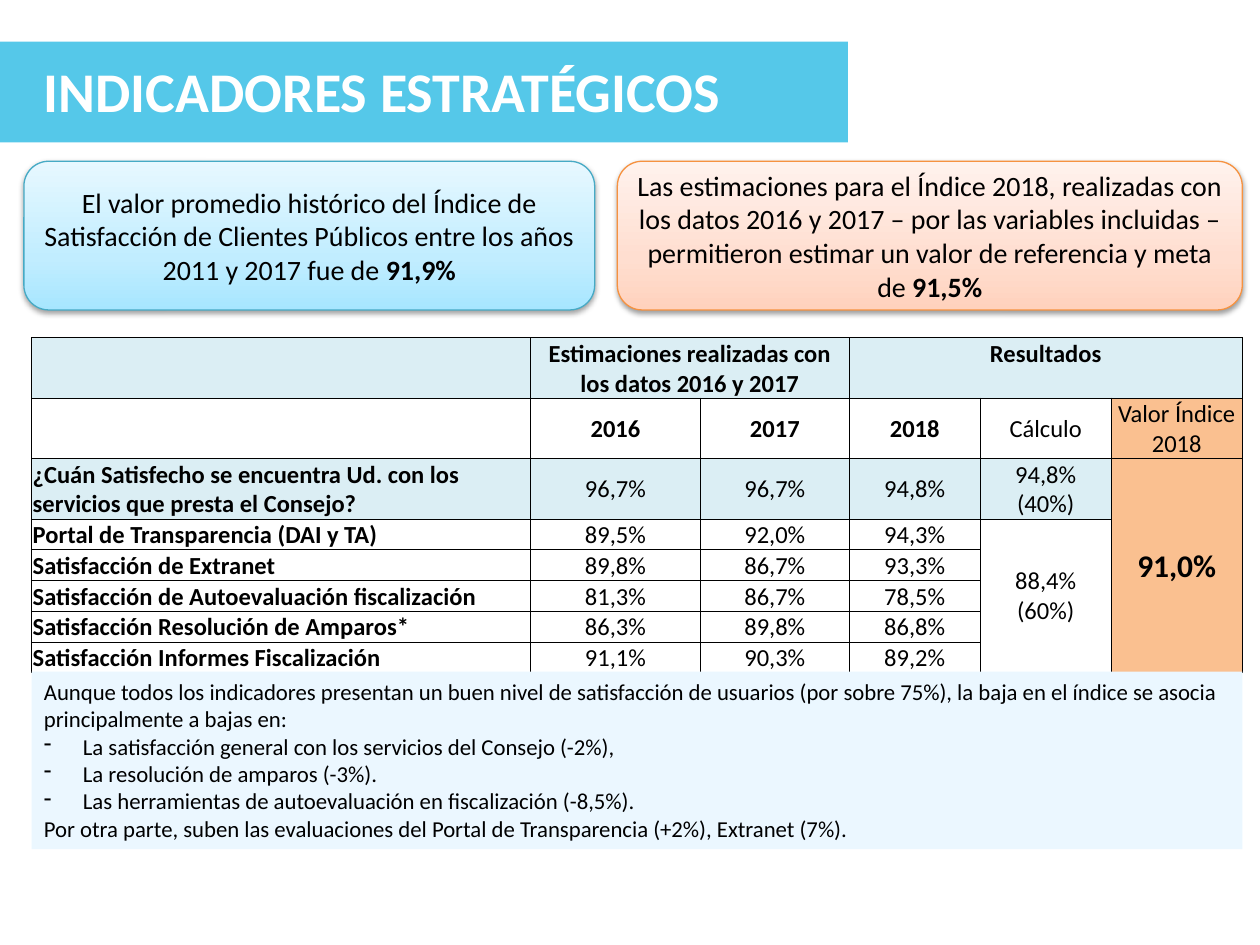
import copy

import pptx
import pptx.dml.color
import pptx.enum.shapes
import pptx.enum.text
import pptx.oxml
import pptx.oxml.ns
import pptx.util
from pptx.util import Inches

COLORS = {
    "banner": "55C8E9", "white": "FFFFFF", "black": "000000",
    "blue_line": "46AAC5", "orange_line": "F69240",
    "header": "DBEEF4", "index": "FAC090", "note": "EBF7FF",
}
BLUE_GRADIENT = ["A7E6FF", "C1EDFF", "E7F8FF"]
ORANGE_GRADIENT = ["FFD2BD", "FFDED0", "FFF2ED"]
SHAPES = pptx.enum.shapes.MSO_SHAPE
ALIGN = pptx.enum.text.PP_ALIGN
ANCHOR = pptx.enum.text.MSO_ANCHOR

COLUMN_WIDTHS = [3.96, 1.35, 1.18, 1.04, 1.04, 1.04]
ROW_HEIGHTS = [0.48] * 3 + [0.24] * 5
TABLE_ROWS = [
    ["", "Estimaciones realizadas con los datos 2016 y 2017", "", "Resultados", "", ""],
    ["", "2016", "2017", "2018", "Cálculo", "Valor Índice 2018"],
    ["¿Cuán Satisfecho se encuentra Ud. con los servicios que presta el Consejo?",
     "96,7%", "96,7%", "94,8%", "94,8%\n(40%)", "91,0%"],
    ["Portal de Transparencia (DAI y TA)", "89,5%", "92,0%", "94,3%", "88,4%\n(60%)", ""],
    ["Satisfacción de Extranet", "89,8%", "86,7%", "93,3%", "", ""],
    ["Satisfacción de Autoevaluación fiscalización", "81,3%", "86,7%", "78,5%", "", ""],
    ["Satisfacción Resolución de Amparos*", "86,3%", "89,8%", "86,8%", "", ""],
    ["Satisfacción Informes Fiscalización", "91,1%", "90,3%", "89,2%", "", ""],
]
MERGES = [((0, 1), (0, 2)), ((0, 3), (0, 5)), ((2, 5), (7, 5)), ((3, 4), (7, 4))]
NOTES = [
    ("Aunque todos los indicadores presentan un buen nivel de satisfacción de usuarios "
     "(por sobre 75%), la baja en el índice se asocia principalmente a bajas en:", False),
    ("La satisfacción general con los servicios del Consejo (-2%),", True),
    ("La resolución de amparos (-3%).", True),
    ("Las herramientas de autoevaluación en fiscalización (-8,5%).", True),
    ("Por otra parte, suben las evaluaciones del Portal de Transparencia (+2%), "
     "Extranet (7%).", False),
]


def rgb(value):
    return pptx.dml.color.RGBColor.from_string(value)


def style_font(paragraph, size, color="black", bold=False):
    font = paragraph.font
    font.name, font.size, font.bold = "Calibri", pptx.util.Pt(size), bold
    font.color.rgb = rgb(COLORS[color])


def add_panel(slide, box, color):
    shape = slide.shapes.add_shape(SHAPES.RECTANGLE, *map(Inches, box))
    shape.shadow.inherit = False
    shape.fill.solid()
    shape.fill.fore_color.rgb = rgb(COLORS[color])
    shape.line.fill.background()
    return shape


def add_title(slide, box, text):
    add_panel(slide, box, "banner")
    left, top, width, height = box
    title = slide.shapes.add_textbox(
        Inches(left + 0.25), Inches(top + 0.07), Inches(width - 1.11), Inches(height - 0.16))
    title.text_frame.word_wrap = False
    paragraph = title.text_frame.paragraphs[0]
    paragraph.text = text
    style_font(paragraph, 32, "white", True)


def add_shadow(shape):
    shape.shadow.inherit = False
    effects = shape._element.spPr.find(pptx.oxml.ns.qn("a:effectLst"))
    effects.append(pptx.oxml.parse_xml(
        f'<a:outerShdw {pptx.oxml.ns.nsdecls("a")} blurRad="40000" dist="20000" '
        'dir="5400000" rotWithShape="0"><a:srgbClr val="000000">'
        '<a:alpha val="38000"/></a:srgbClr></a:outerShdw>'))


def fill_gradient(shape, colors):
    """Three stops, running from the bottom edge to the top."""
    shape.fill.gradient()
    shape.fill.gradient_angle = 90
    stop_list = next(shape._element.spPr.iter(pptx.oxml.ns.qn("a:gsLst")))
    stop_list.insert(1, copy.deepcopy(stop_list[0]))
    for stop, color, position in zip(shape.fill.gradient_stops, colors, (0, 0.35, 1)):
        stop.color.rgb = rgb(color)
        stop.position = position


def add_callout(slide, box, text, value, gradient, line_color):
    shape = slide.shapes.add_shape(SHAPES.ROUNDED_RECTANGLE, *map(Inches, box))
    fill_gradient(shape, gradient)
    shape.line.color.rgb = rgb(COLORS[line_color])
    shape.line.width = pptx.util.Pt(0.75)
    add_shadow(shape)
    shape.text_frame.word_wrap = True
    shape.text_frame.vertical_anchor = ANCHOR.MIDDLE
    paragraph = shape.text_frame.paragraphs[0]
    paragraph.alignment = ALIGN.CENTER
    style_font(paragraph, 16)
    paragraph.add_run().text = text
    run = paragraph.add_run()
    run.text = value
    run.font.bold = True


def add_borders(cell):
    properties = cell._tc.get_or_add_tcPr()
    for index, side in enumerate(("lnL", "lnR", "lnT", "lnB")):
        properties.insert(index, pptx.oxml.parse_xml(
            f'<a:{side} {pptx.oxml.ns.nsdecls("a")} w="6350"><a:solidFill>'
            f'<a:srgbClr val="{COLORS["black"]}"/></a:solidFill></a:{side}>'))


def cell_color(row, column):
    if row > 0 and column == 5:
        return "index"
    return "header" if row in (0, 2) else "white"


def style_cell(cell, row, column, text):
    cell.fill.solid()
    cell.fill.fore_color.rgb = rgb(COLORS[cell_color(row, column)])
    add_borders(cell)
    cell.margin_left = cell.margin_right = cell.margin_top = Inches(0.01)
    cell.margin_bottom = 0
    cell.vertical_anchor = ANCHOR.TOP if text == "Resultados" else ANCHOR.MIDDLE
    cell.text = text
    is_index_value = (row, column) == (2, 5)
    bold = row == 0 or column == 0 or (row == 1 and column < 4) or is_index_value
    for paragraph in cell.text_frame.paragraphs:
        paragraph.alignment = ALIGN.LEFT if column == 0 else ALIGN.CENTER
        style_font(paragraph, 18 if is_index_value else 14, bold=bold)


def add_results_table(slide, box):
    frame = slide.shapes.add_table(
        len(ROW_HEIGHTS), len(COLUMN_WIDTHS), *map(Inches, box))
    table = frame.table
    table.first_row = table.horz_banding = False
    for column, width in zip(table.columns, COLUMN_WIDTHS):
        column.width = Inches(width)
    for row, height in zip(table.rows, ROW_HEIGHTS):
        row.height = Inches(height)
    for row, texts in enumerate(TABLE_ROWS):
        for column, text in enumerate(texts):
            style_cell(table.cell(row, column), row, column, text)
    for first, last in MERGES:
        table.cell(*first).merge(table.cell(*last))


def add_dash_bullet(paragraph):
    properties = paragraph._p.get_or_add_pPr()
    properties.set("marL", str(Inches(0.31)))
    properties.set("indent", str(-Inches(0.31)))
    properties.append(pptx.oxml.parse_xml(
        f'<a:buChar {pptx.oxml.ns.nsdecls("a")} char="-"/>'))


def add_notes_panel(slide, box):
    text_frame = add_panel(slide, box, "note").text_frame
    text_frame.word_wrap = True
    text_frame.vertical_anchor = ANCHOR.TOP
    for index, (text, bulleted) in enumerate(NOTES):
        paragraph = text_frame.add_paragraph() if index else text_frame.paragraphs[0]
        paragraph.text = text
        paragraph.alignment = ALIGN.LEFT
        if bulleted:
            add_dash_bullet(paragraph)
        style_font(paragraph, 13)


def main():
    presentation = pptx.Presentation()
    presentation.slide_width, presentation.slide_height = Inches(10), Inches(7.5)
    slide = presentation.slides.add_slide(presentation.slide_layouts[6])
    add_title(slide, (0, 0.33, 6.73, 0.8), "INDICADORES ESTRATÉGICOS")
    add_callout(slide, (0.19, 1.28, 4.53, 1.18),
                "El valor promedio histórico del Índice de Satisfacción de Clientes "
                "Públicos entre los años 2011 y 2017 fue de ", "91,9%",
                BLUE_GRADIENT, "blue_line")
    add_callout(slide, (4.9, 1.28, 4.96, 1.18),
                "Las estimaciones para el Índice 2018, realizadas con los datos 2016 y 2017 "
                "– por las variables incluidas – permitieron estimar un valor de referencia "
                "y meta de ", "91,5%", ORANGE_GRADIENT, "orange_line")
    add_results_table(slide, (0.25, 2.68, 9.61, 2.65))
    add_notes_panel(slide, (0.25, 5.33, 9.61, 1.41))
    presentation.save("out.pptx")


if __name__ == "__main__":
    main()
